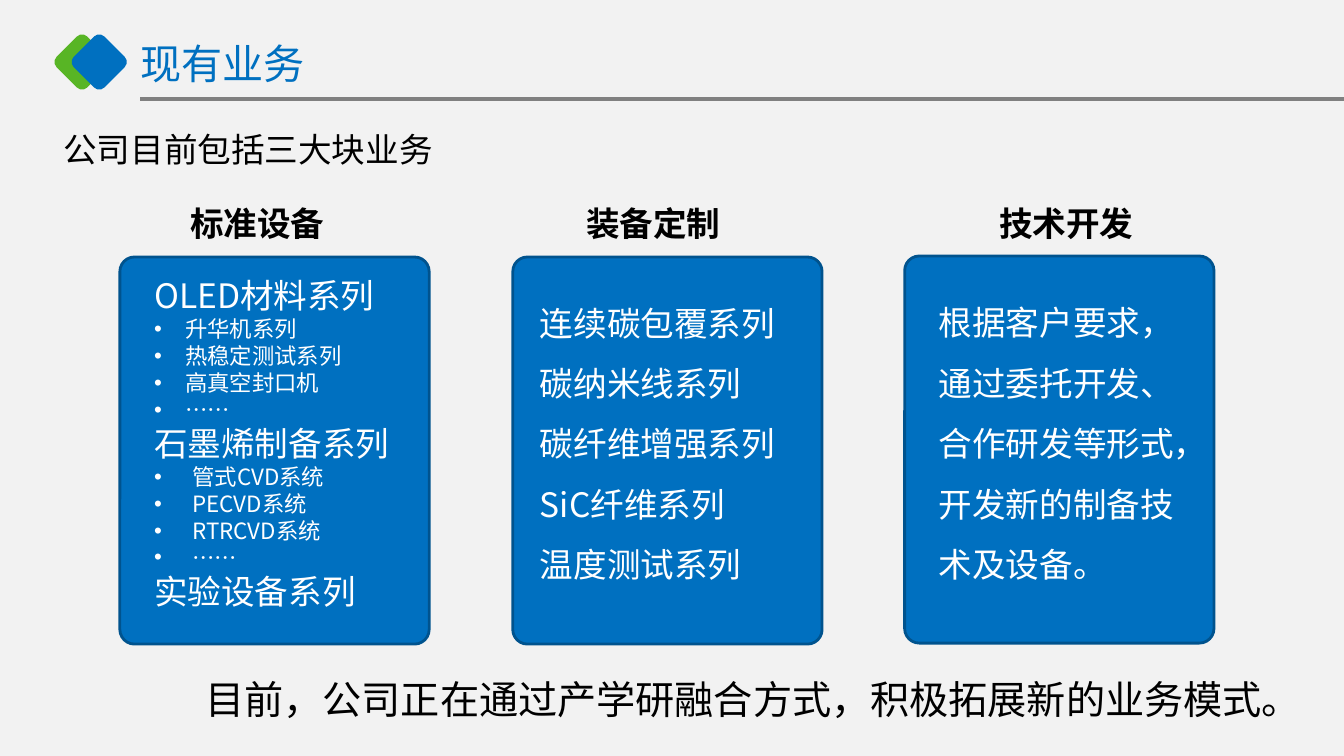
from dataclasses import dataclass

from lxml.etree import SubElement
from pptx import Presentation
from pptx.dml.color import RGBColor
from pptx.enum.shapes import MSO_CONNECTOR, MSO_SHAPE
from pptx.enum.text import MSO_ANCHOR, MSO_AUTO_SIZE, PP_ALIGN
from pptx.oxml.ns import qn
from pptx.shapes.autoshape import Shape
from pptx.slide import Slide
from pptx.util import Emu, Pt

EMU_PER_PX = 9144  # 100 px to the inch
FONT = "Noto Sans CJK SC"
BLUE = RGBColor(0x00, 0x70, 0xC0)
DARK_BLUE = RGBColor(0x00, 0x53, 0x8E)
GREEN = RGBColor(0x58, 0xB5, 0x25)
GRAY = RGBColor(0x80, 0x80, 0x80)
PALE_GRAY = RGBColor(0xF2, 0xF2, 0xF2)
BLACK = RGBColor(0x00, 0x00, 0x00)
WHITE = RGBColor(0xFF, 0xFF, 0xFF)


@dataclass(frozen=True)
class Box:
    left: int
    top: int
    width: int
    height: int


@dataclass(frozen=True)
class Line:
    """One paragraph; a hang above zero makes it a bullet."""
    text: str
    size: float = 24
    hang: int = 0


@dataclass(frozen=True)
class Business:
    heading: str
    heading_left: int
    card: Box
    body: Box
    lines: list[Line]
    spacing: float = 1.5
    placeholder: int | None = None


def bullets(hang: int, *texts: str) -> list[Line]:
    return [Line(text, 16, hang) for text in texts]


BUSINESSES = [
    Business("标准设备", 179, Box(119, 255, 307, 384), Box(143, 268, 323, 427),
             [Line("OLED材料系列"),
              *bullets(31, "升华机系列", "热稳定测试系列", "高真空封口机", "……"),
              Line("石墨烯制备系列"),
              *bullets(38, "管式CVD系统", "PECVD系统", "RTRCVD系统", "……"),
              Line("实验设备系列")], spacing=1.0, placeholder=1),
    Business("装备定制", 572, Box(509, 255, 307, 384), Box(526, 275, 323, 374),
             [Line("连续碳包覆系列"), Line("碳纳米线系列"), Line("碳纤维增强系列"),
              Line("SiC纤维系列"), Line("温度测试系列")], placeholder=2),
    Business("技术开发", 982, Box(898, 254, 307, 384), Box(922, 275, 273, 313),
             [Line("根据客户要求，通过委托开发、合作研发等形式，开发新的制备技术及设备。")]),
]


def px(length: int) -> Emu:
    return Emu(length * EMU_PER_PX)


def edges(box: Box) -> tuple[Emu, Emu, Emu, Emu]:
    return px(box.left), px(box.top), px(box.width), px(box.height)


def write(shape: Shape, lines: list[Line], *, color: RGBColor = BLACK, bold: bool = False,
          spacing: float = 1.0, anchor: MSO_ANCHOR = MSO_ANCHOR.TOP) -> None:
    frame = shape.text_frame
    frame.word_wrap = True
    frame.auto_size = MSO_AUTO_SIZE.NONE
    frame.vertical_anchor = anchor
    for index, line in enumerate(lines):
        paragraph = frame.add_paragraph() if index else frame.paragraphs[0]
        paragraph.alignment = PP_ALIGN.LEFT
        paragraph.line_spacing = spacing
        paragraph.space_before = Pt(0)
        properties = paragraph._p.get_or_add_pPr()
        properties.set("marL", str(px(line.hang)))
        properties.set("indent", str(px(-line.hang)))
        if line.hang:
            SubElement(properties, qn("a:buFont"), typeface="Arial")
            SubElement(properties, qn("a:buChar"), char="•")
        else:
            SubElement(properties, qn("a:buNone"))
        run = paragraph.add_run()
        run.text = line.text
        run.font.name = FONT
        run.font.size = Pt(line.size)
        run.font.bold = bold
        run.font.color.rgb = color
        SubElement(run.font._element, qn("a:ea"), typeface=FONT)


def add_text_box(slide: Slide, box: Box) -> Shape:
    return slide.shapes.add_textbox(*edges(box))


def place(placeholder: Shape, box: Box) -> Shape:
    """Move a placeholder to the box and in front of the shapes drawn so far."""
    placeholder.left, placeholder.top, placeholder.width, placeholder.height = edges(box)
    placeholder.element.getparent().append(placeholder.element)
    return placeholder


def add_rounded(slide: Slide, box: Box, fill: RGBColor) -> Shape:
    shape = slide.shapes.add_shape(MSO_SHAPE.ROUNDED_RECTANGLE, *edges(box))
    shape.shadow.inherit = False
    shape.fill.solid()
    shape.fill.fore_color.rgb = fill
    shape.line.fill.background()
    return shape


def add_header(slide: Slide) -> None:
    rule = slide.shapes.add_connector(MSO_CONNECTOR.STRAIGHT, px(139), px(98), px(1334), px(98))
    rule.line.color.rgb = GRAY
    rule.line.width = Pt(3)
    SubElement(rule.element.spPr, qn("a:effectLst"))
    for left, fill in ((60, GREEN), (77, BLUE)):
        add_rounded(slide, Box(left, 40, 43, 43), fill).rotation = 315
    title = place(slide.shapes.title, Box(132, 39, 860, 48))
    frame = title.text_frame
    frame.margin_left = frame.margin_right = px(7)
    frame.margin_top = frame.margin_bottom = px(4)
    write(title, [Line("现有业务", 29.4)], color=BLUE, anchor=MSO_ANCHOR.MIDDLE)


def add_business(slide: Slide, business: Business) -> None:
    card = add_rounded(slide, business.card, BLUE)
    card.adjustments[0] = 0.047
    card.line.color.rgb = DARK_BLUE
    card.line.width = Pt(2)
    heading = add_text_box(slide, Box(business.heading_left, 196, 213, 50))
    write(heading, [Line(business.heading)], bold=True)
    if business.placeholder is None:
        body = add_text_box(slide, business.body)
    else:
        body = place(slide.placeholders[business.placeholder], business.body)
    write(body, business.lines, color=WHITE, spacing=business.spacing)


def main() -> None:
    presentation = Presentation()
    presentation.slide_width, presentation.slide_height = px(1334), px(750)
    two_content = presentation.slide_layouts[3]
    slide = presentation.slides.add_slide(two_content)
    slide.background.fill.solid()
    slide.background.fill.fore_color.rgb = PALE_GRAY

    add_header(slide)
    write(add_text_box(slide, Box(53, 123, 520, 50)), [Line("公司目前包括三大块业务")])
    for business in BUSINESSES:
        add_business(slide, business)
    write(add_text_box(slide, Box(194, 665, 1106, 57)),
          [Line("目前，公司正在通过产学研融合方式，积极拓展新的业务模式。", 28)])
    presentation.save("out.pptx")


if __name__ == "__main__":
    main()
